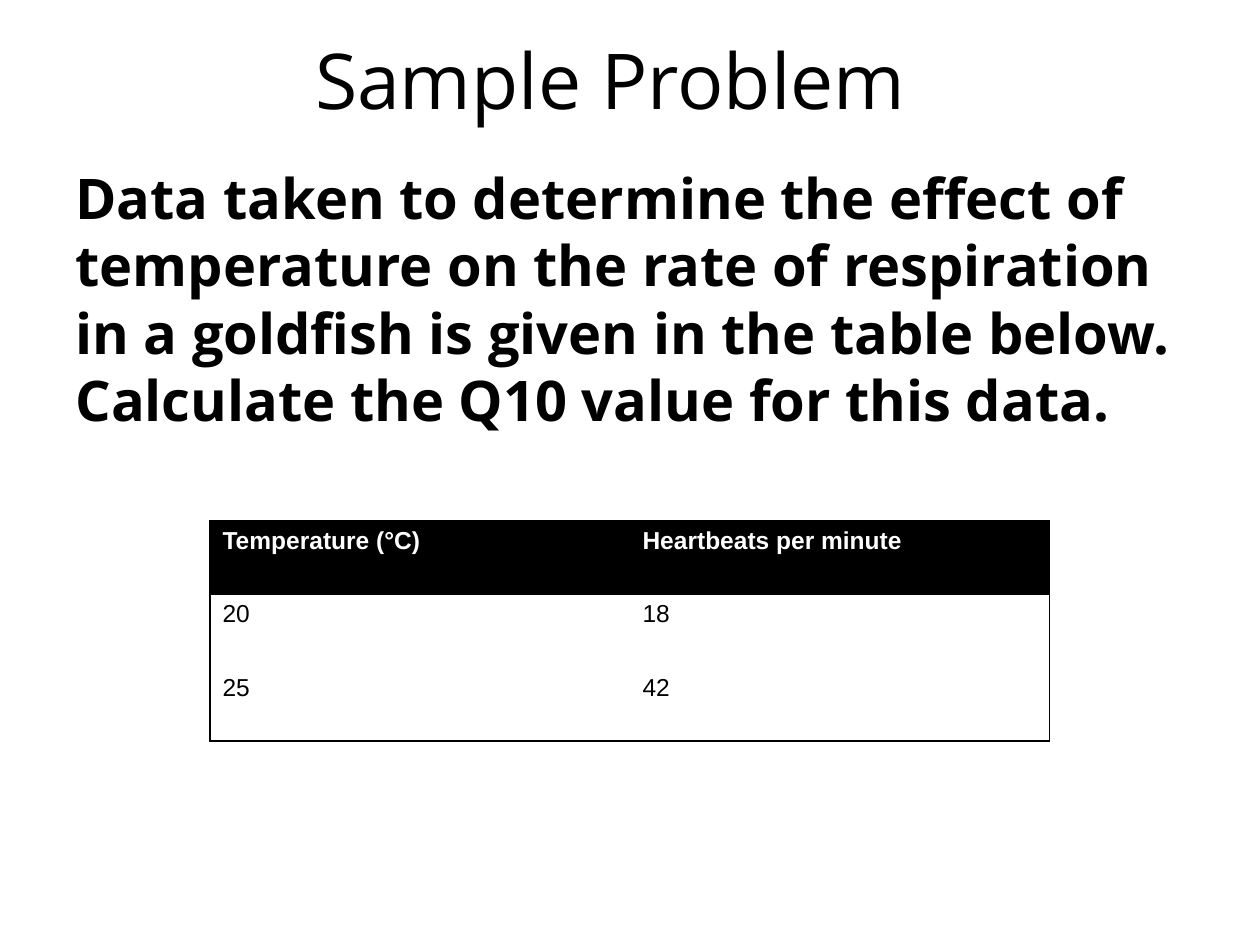
from dataclasses import dataclass

from lxml.etree import SubElement
from pptx import Presentation
from pptx.dml.color import RGBColor
from pptx.enum.text import MSO_ANCHOR as Anchor, PP_ALIGN as Align
from pptx.oxml.ns import qn
from pptx.util import Pt


@dataclass(frozen=True)
class Theme:
    ink: str = "000000"
    paper: str = "FFFFFF"
    text_font: str = "Open Sans"
    table_font: str = "Arial"
    title_size: float = 44
    problem_size: float = 32
    table_size: float = 14
    border_width: float = 0.75
    plain_table: str = "{2D5ABB26-0587-4C30-8999-92F81FD0307C}"


@dataclass(frozen=True)
class Box:
    left: float
    top: float
    width: float
    height: float

    def lengths(self) -> tuple:
        return Pt(self.left), Pt(self.top), Pt(self.width), Pt(self.height)


@dataclass(frozen=True)
class Reading:
    temperature: str
    heartbeats: str


THEME = Theme()
TITLE_BOX = Box(36, 0, 648, 90)
PROBLEM_BOX = Box(36, 90, 648, 450)
TABLE_BOX = Box(120, 297.5, 480, 126)
READINGS = (
    Reading("Temperature (°C)", "Heartbeats per minute"),
    Reading("20", "18"),
    Reading("25", "42"),
)


def write(frame, text: str, *, size: float, font: str, color: str = THEME.ink,
          bold: bool = False, align=Align.LEFT, anchor=Anchor.TOP) -> None:
    frame.word_wrap = True
    frame.vertical_anchor = anchor
    paragraph = frame.paragraphs[0]
    paragraph.alignment = align
    run = paragraph.add_run()
    run.text = text
    run.font.size = Pt(size)
    run.font.name = font
    run.font.bold = bold
    run.font.color.rgb = RGBColor.from_string(color)


def set_border(cell, side: str, drawn: bool) -> None:
    line = SubElement(cell._tc.get_or_add_tcPr(), qn(f"a:ln{side}"),
                      w=str(Pt(THEME.border_width)))
    if drawn:
        fill = SubElement(line, qn("a:solidFill"))
        SubElement(fill, qn("a:srgbClr"), val=THEME.ink)
    else:
        SubElement(line, qn("a:noFill"))


def add_readings(slide, readings: tuple[Reading, ...], box: Box) -> None:
    table = slide.shapes.add_table(len(readings), 2, *box.lengths()).table
    table.horz_banding = False
    table._tbl.tblPr.find(qn("a:tableStyleId")).text = THEME.plain_table
    last = len(readings) - 1
    for row, reading in enumerate(readings):
        table.rows[row].height = Pt(box.height / len(readings))
        header = row == 0
        for column, text in enumerate((reading.temperature, reading.heartbeats)):
            cell = table.cell(row, column)
            write(cell.text_frame, text, size=THEME.table_size,
                  font=THEME.table_font, bold=header,
                  color=THEME.paper if header else THEME.ink)
            edges = {"L": column == 0, "R": column == 1,
                     "T": row <= 1, "B": row in (0, last)}
            for side, drawn in edges.items():
                set_border(cell, side, drawn)
            if header:
                cell.fill.solid()
                cell.fill.fore_color.rgb = RGBColor.from_string(THEME.ink)
            else:
                cell.fill.background()


def main() -> None:
    deck = Presentation()
    deck.slide_width, deck.slide_height = Pt(720), Pt(540)
    slide = deck.slides.add_slide(deck.slide_layouts[5])

    title = slide.shapes.title
    title.left, title.top, title.width, title.height = TITLE_BOX.lengths()
    write(title.text_frame, "Sample Problem\t", size=THEME.title_size,
          font=THEME.text_font, align=Align.CENTER, anchor=Anchor.MIDDLE)

    problem = slide.shapes.add_textbox(*PROBLEM_BOX.lengths())
    write(problem.text_frame,
          "Data taken to determine the effect of temperature on the rate "
          "of respiration in a goldfish is given in the table below. "
          "Calculate the Q10 value for this data.",
          size=THEME.problem_size, font=THEME.text_font, bold=True)

    add_readings(slide, READINGS, TABLE_BOX)
    deck.save("out.pptx")


if __name__ == "__main__":
    main()
